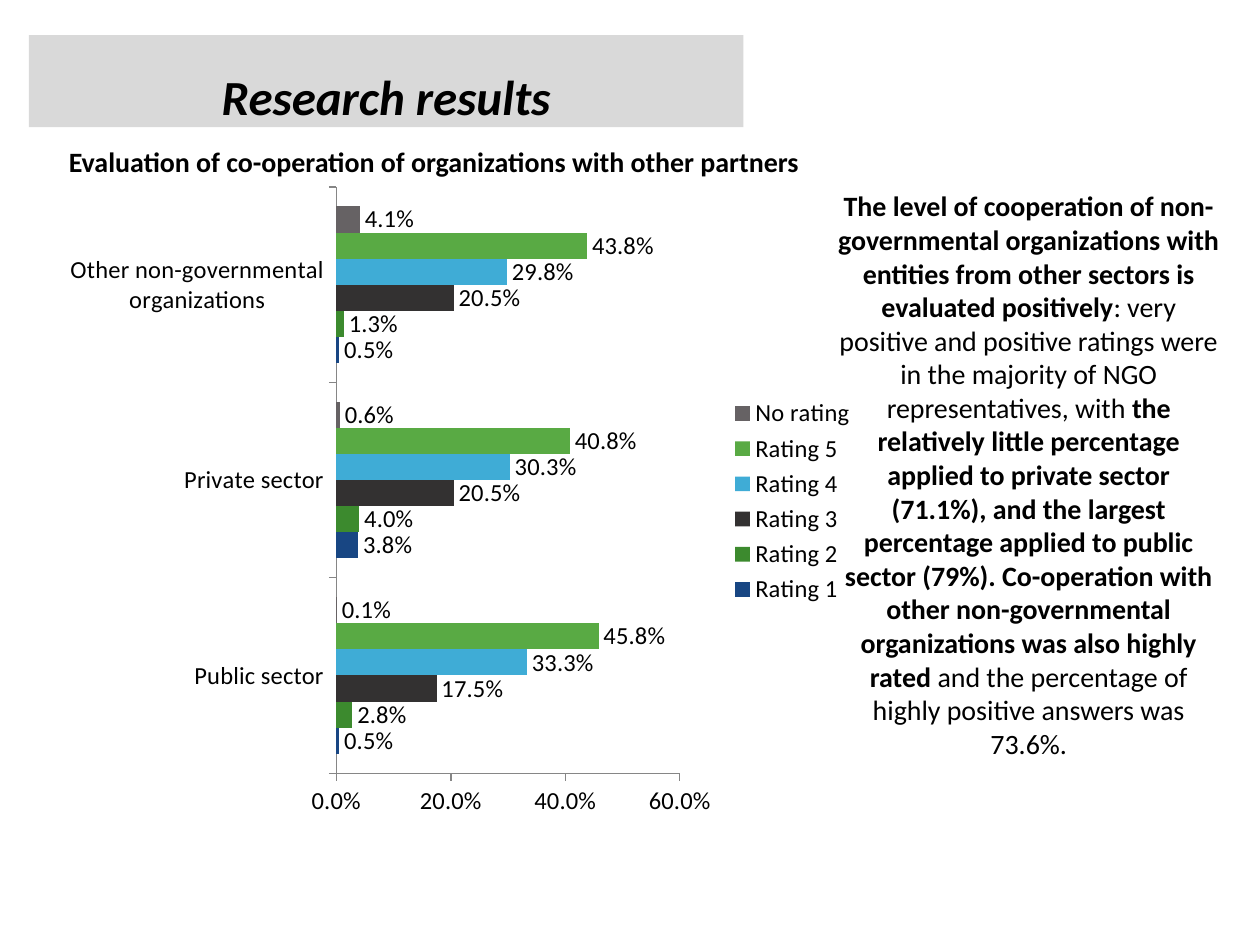
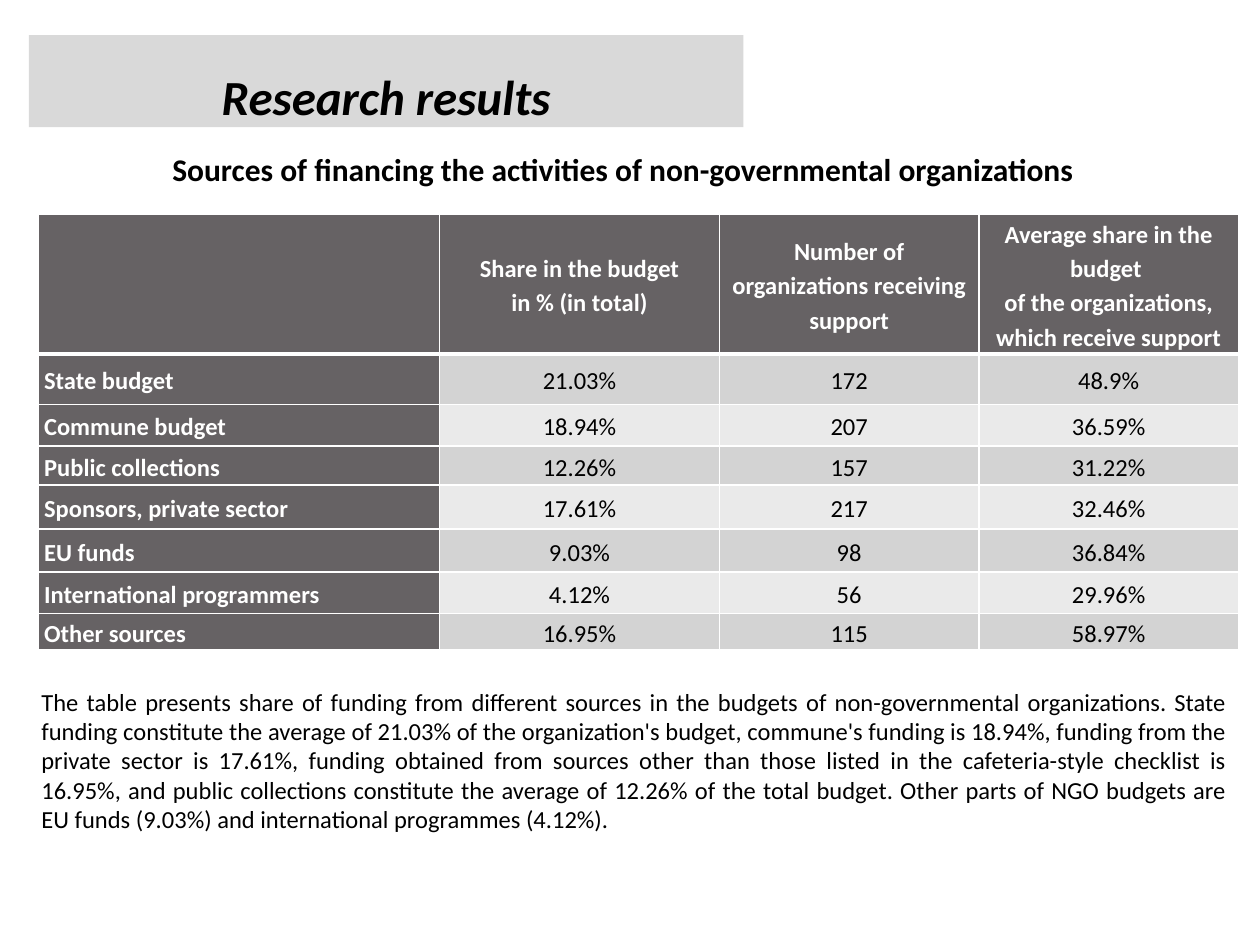
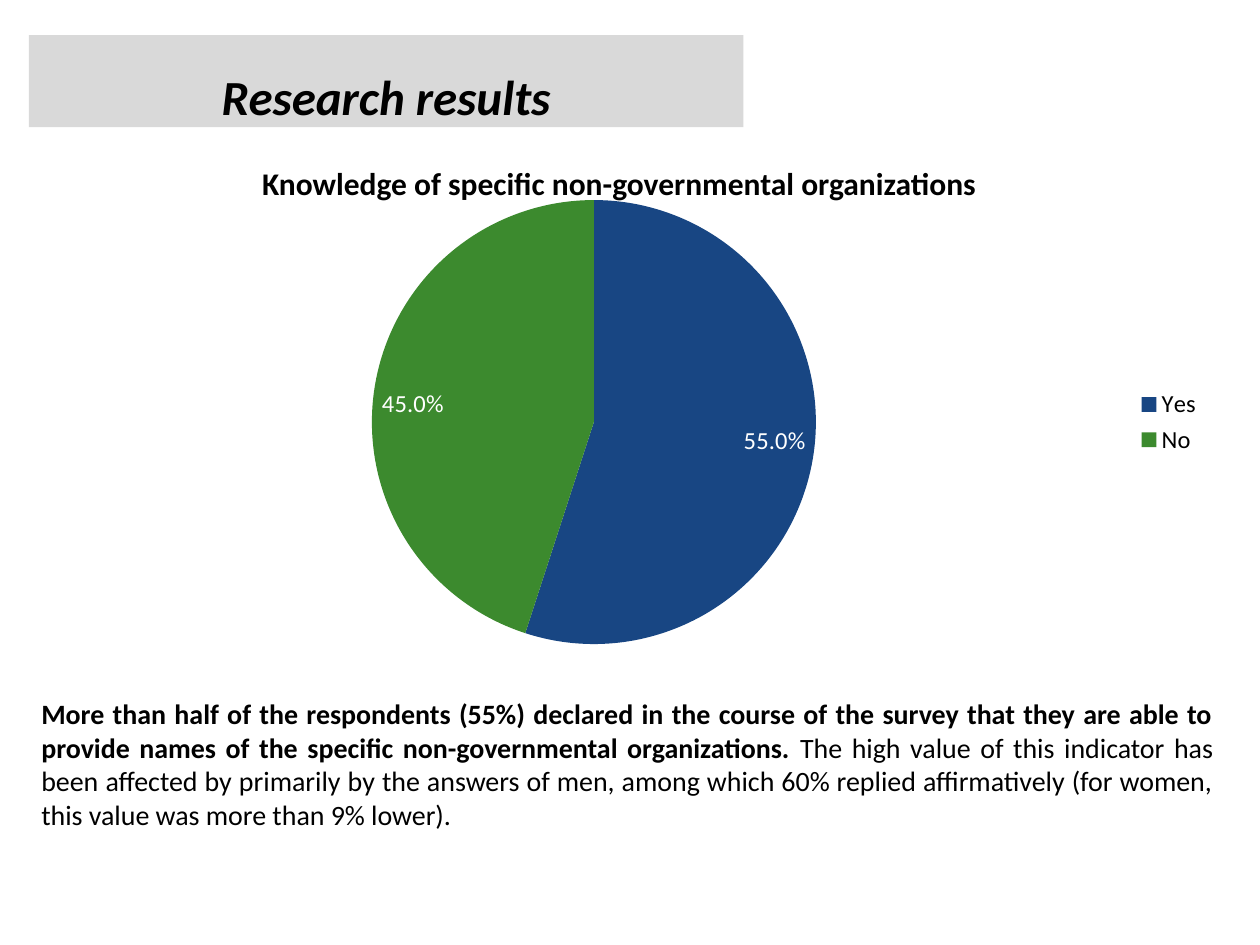
import lxml.etree
import pptx
import pptx.chart.data
import pptx.dml.color
import pptx.enum.chart
import pptx.enum.shapes
import pptx.enum.text
import pptx.oxml.ns
import pptx.util

Inches = pptx.util.Inches
Pt = pptx.util.Pt
ALIGN = pptx.enum.text.PP_ALIGN
ANCHOR = pptx.enum.text.MSO_ANCHOR
CHART = pptx.enum.chart.XL_CHART_TYPE
LABEL = pptx.enum.chart.XL_LABEL_POSITION

FONT = "Calibri"
BLACK, WHITE, AXIS_GREY = "000000", "FFFFFF", "868686"
BAND, HEADER = "D9D9D9", "666264"
ROW_FILLS = ["D3D3D3", "EAEAEA"]
BLUE, GREEN = "184683", "3C8A2E"
PERCENT = "0.0%"


def rgb(value):
    return pptx.dml.color.RGBColor.from_string(value)


def box(left, top, width, height):
    return [Inches(length) for length in (left, top, width, height)]


def write(frame, parts, size=14, color=BLACK, bold=False, italic=False,
          align=ALIGN.CENTER, spacing=None):
    """Fill a frame with one paragraph; parts is a string or (string, bold) pairs."""
    if isinstance(parts, str):
        parts = [(parts, bold)]
    paragraph = frame.paragraphs[0]
    paragraph.alignment = align
    if spacing:
        paragraph.line_spacing = spacing
    for part, is_bold in parts:
        for number, line in enumerate(part.split("\n")):
            if number:
                paragraph.add_line_break()
            run = paragraph.add_run()
            run.text = line
            run.font.name, run.font.size = FONT, Pt(size)
            run.font.bold, run.font.italic = is_bold, italic
            run.font.color.rgb = rgb(color)


def cell_borders(cell, widths):
    """Draw white borders; widths maps L, R, T, B to points."""
    properties = cell._tc.get_or_add_tcPr()
    for side, width in widths.items():
        line = lxml.etree.SubElement(
            properties, pptx.oxml.ns.qn(f"a:ln{side}"), w=str(Pt(width)))
        fill = lxml.etree.SubElement(line, pptx.oxml.ns.qn("a:solidFill"))
        lxml.etree.SubElement(fill, pptx.oxml.ns.qn("a:srgbClr"), val=WHITE)


class Deck:
    def __init__(self):
        self.presentation = pptx.Presentation()
        self.presentation.slide_width = Inches(10)
        self.presentation.slide_height = Inches(7.5)
        self.slide = None

    def new_slide(self, heading):
        self.slide = self.presentation.slides.add_slide(
            self.presentation.slide_layouts[6])
        band = self.slide.shapes.add_shape(
            pptx.enum.shapes.MSO_SHAPE.RECTANGLE, *box(0.23, 0.28, 5.67, 0.73))
        band.shadow.inherit = False
        band.fill.solid()
        band.fill.fore_color.rgb = rgb(BAND)
        band.line.fill.background()
        band.text_frame.vertical_anchor = ANCHOR.MIDDLE
        write(band.text_frame, heading, size=28, bold=True, italic=True, spacing=1.5)

    def text(self, place, parts, **style):
        frame = self.slide.shapes.add_textbox(*box(*place)).text_frame
        frame.word_wrap = True
        frame.auto_size = pptx.enum.text.MSO_AUTO_SIZE.SHAPE_TO_FIT_TEXT
        write(frame, parts, **style)

    def chart(self, kind, place, categories, series, label_position, label_color=BLACK):
        data = pptx.chart.data.CategoryChartData(number_format=PERCENT)
        data.categories = categories
        for name, values in series:
            data.add_series(name, values)
        chart = self.slide.shapes.add_chart(kind, *box(*place), data).chart
        chart.has_title = False
        chart.font.name, chart.font.size = FONT, Pt(14)
        chart.font.color.rgb = rgb(BLACK)
        chart.has_legend = True
        chart.legend.position = pptx.enum.chart.XL_LEGEND_POSITION.RIGHT
        chart.legend.include_in_layout = False
        for plotted in chart.plots[0].series:
            labels = plotted.data_labels
            labels.show_value = True
            labels.number_format, labels.number_format_is_linked = PERCENT, False
            labels.position = label_position
            labels.font.name, labels.font.size = FONT, Pt(14)
            labels.font.color.rgb = rgb(label_color)
        return chart

    def bars(self, place, categories, series, colors, maximum, step):
        chart = self.chart(CHART.BAR_CLUSTERED, place, categories, series,
                           LABEL.OUTSIDE_END)
        plot = chart.plots[0]
        plot.gap_width, plot.vary_by_categories = 150, False
        for plotted, color in zip(plot.series, colors):
            plotted.format.fill.solid()
            plotted.format.fill.fore_color.rgb = rgb(color)
        for axis in (chart.category_axis, chart.value_axis):
            axis.has_major_gridlines = False
            axis.major_tick_mark = pptx.enum.chart.XL_TICK_MARK.OUTSIDE
            axis.format.line.color.rgb = rgb(AXIS_GREY)
        scale = chart.value_axis
        scale.minimum_scale, scale.maximum_scale, scale.major_unit = 0, maximum, step
        scale.tick_labels.number_format = PERCENT
        scale.tick_labels.number_format_is_linked = False

    def pie(self, place, categories, series, colors):
        chart = self.chart(CHART.PIE, place, categories, [series],
                           LABEL.INSIDE_END, WHITE)
        for number, color in enumerate(colors):
            slice_fill = chart.plots[0].series[0].points[number].format.fill
            slice_fill.solid()
            slice_fill.fore_color.rgb = rgb(color)

    def table(self, place, rows, widths, heights):
        table = self.slide.shapes.add_table(len(rows), len(widths), *box(*place)).table
        for column, width in zip(table.columns, widths):
            column.width = Inches(width)
        for row, height in zip(table.rows, heights):
            row.height = Inches(height)
        for r, values in enumerate(rows):
            for c, value in enumerate(values):
                cell = table.cell(r, c)
                cell.margin_left = cell.margin_right = Inches(0.05)
                cell.margin_top = cell.margin_bottom = 0
                cell.vertical_anchor = ANCHOR.MIDDLE
                # A thick rule parts the header from the body
                cell_borders(cell, {"L": 1, "R": 1, "T": 3 if r == 1 else 1,
                                    "B": 3 if r == 0 else 1})
                is_head = r == 0 or c == 0
                cell.fill.solid()
                cell.fill.fore_color.rgb = rgb(HEADER if is_head else ROW_FILLS[(r - 1) % 2])
                if value:
                    write(cell.text_frame, value, bold=is_head, spacing=1.15,
                          color=WHITE if is_head else BLACK,
                          align=ALIGN.JUSTIFY if c == 0 else ALIGN.CENTER)


def main():
    deck = Deck()
    heading = "Research results"

    # Co-operation ratings
    deck.new_slide(heading)
    deck.text((0.23, 1.1, 6.43, 0.37),
              "Evaluation of co-operation of organizations with other partners",
              size=16, bold=True)
    deck.text((6.55, 1.45, 3.23, 4.68), [
        ("The level of cooperation of non-governmental organizations with entities "
         "from other sectors is evaluated positively", True),
        (": very positive and positive ratings were in the majority of NGO "
         "representatives, with ", False),
        ("the relatively little percentage applied to private sector (71.1%), and the "
         "largest percentage applied to public sector (79%). Co-operation with other "
         "non-governmental organizations was also highly rated ", True),
        ("and the percentage of highly positive answers was 73.6%.", False),
    ], size=16)
    deck.bars(
        (0.43, 1.38, 6.46, 5.2),
        ["Public sector", "Private sector", "Other non-governmental organizations"],
        [("Rating 1", (0.005, 0.038, 0.005)),
         ("Rating 2", (0.028, 0.04, 0.013)),
         ("Rating 3", (0.175, 0.205, 0.205)),
         ("Rating 4", (0.333, 0.303, 0.298)),
         ("Rating 5", (0.458, 0.408, 0.438)),
         ("No rating", (0.001, 0.006, 0.041))],
        [BLUE, GREEN, "333131", "3FACD6", "59AA44", HEADER],
        maximum=0.6, step=0.2)

    # Sources of financing
    deck.new_slide(heading)
    deck.text((0.3, 1.14, 9.29, 0.4),
              "Sources of financing the activities of non-governmental organizations",
              size=18, bold=True)
    deck.text((0.23, 5.4, 9.61, 1.55),
              "The table presents share of funding from different sources in the budgets "
              "of non-governmental organizations. State funding constitute the average of "
              "21.03% of the organization's budget, commune's funding is 18.94%, funding "
              "from the private sector is 17.61%, funding obtained from sources other than "
              "those listed in the cafeteria-style checklist is 16.95%, and public "
              "collections constitute the average of 12.26% of the total budget. Other "
              "parts of NGO budgets are EU funds (9.03%) and international programmes "
              "(4.12%).", align=ALIGN.JUSTIFY)
    deck.table(
        (0.3, 1.7, 9.53, 3.46),
        [("", "Share in the budget\nin % (in total)",
          "Number of organizations receiving support",
          "Average share in the budget \nof the organizations, which receive support"),
         ("State budget", "21.03%", "172", "48.9%"),
         ("Commune budget", "18.94%", "207", "36.59%"),
         ("Public collections", "12.26%", "157", "31.22%"),
         ("Sponsors, private sector", "17.61%", "217", "32.46%"),
         ("EU funds", "9.03%", "98", "36.84%"),
         ("International programmers", "4.12%", "56", "29.96%"),
         ("Other sources", "16.95%", "115", "58.97%")],
        widths=[3.19, 2.22, 2.06, 2.06],
        heights=[1.11, 0.4, 0.33, 0.31, 0.35, 0.34, 0.33, 0.29])

    # Knowledge of organizations
    deck.new_slide(heading)
    deck.text((0.23, 1.25, 9.37, 0.4),
              "Knowledge of specific non-governmental organizations", size=18, bold=True)
    deck.text((0.23, 5.48, 9.5, 1.18), [
        ("More than half of the respondents (55%) declared in the course of the survey "
         "that they are able to provide names of the specific non-governmental "
         "organizations. ", True),
        ("The high value of this indicator has been affected by primarily by the answers "
         "of men, among which 60% replied affirmatively (for women, this value was more "
         "than 9% lower).", False),
    ], size=16, align=ALIGN.JUSTIFY)
    deck.pie((0.43, 1.45, 9.21, 3.8), ["Yes", "No"],
             ("Series 1", (0.55, 0.45)), [BLUE, GREEN])

    deck.presentation.save("out.pptx")


if __name__ == "__main__":
    main()
